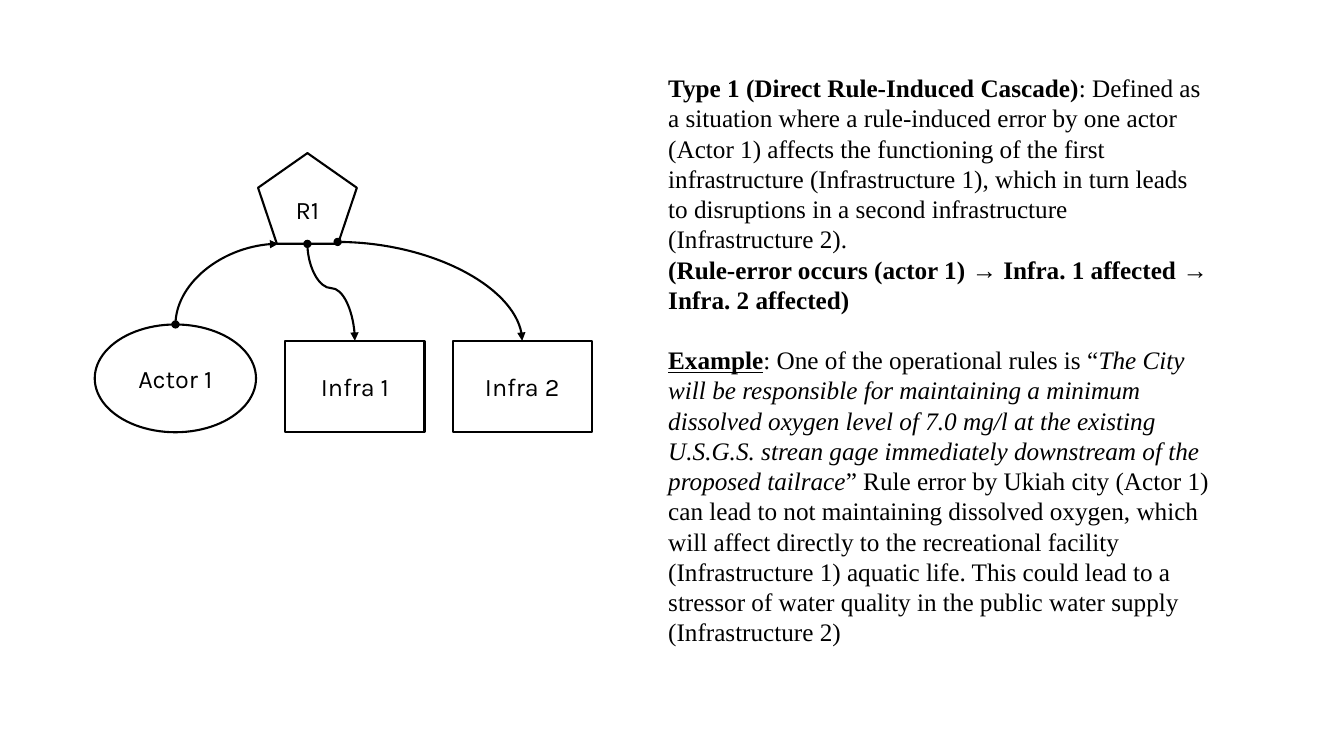
import lxml.etree
import pptx
import pptx.dml.color
import pptx.enum.shapes
import pptx.enum.text
import pptx.oxml.ns
import pptx.util

Pt = pptx.util.Pt
SHAPES = pptx.enum.shapes.MSO_SHAPE
BLACK = "000000"
WHITE = "FFFFFF"

DEFINITION = [
    ("Type 1 (Direct Rule-Induced Cascade)", "b"),
    (": Defined as a situation where a rule-induced error by one actor (Actor 1) affects the "
     "functioning of the first infrastructure (Infrastructure 1), which in turn leads to "
     "disruptions in a second infrastructure (Infrastructure 2).", ""),
    ("\n", ""),
    ("(Rule-error occurs (actor 1) ", "b"),
    ("→", ""),
    (" Infra. 1 affected ", "b"),
    ("→", ""),
    (" Infra. 2 affected)", "b"),
]
EXAMPLE = [
    ("Example", "bu"),
    (": One of the operational rules is “", ""),
    ("The City will be responsible for maintaining a minimum dissolved oxygen level of 7.0 mg/l "
     "at the existing U.S.G.S. strean gage immediately downstream of the proposed tailrace", "i"),
    ("” Rule error by Ukiah city (Actor 1) can lead to not maintaining dissolved oxygen, which "
     "will affect directly to the recreational facility (Infrastructure 1) aquatic life. This "
     "could lead to a stressor of water quality in the public water supply "
     "(Infrastructure 2)", ""),
]


def set_color(color_format, value):
    color_format.rgb = pptx.dml.color.RGBColor.from_string(value)


def set_line(line):
    line.width = Pt(1.5)
    line.fill.solid()
    set_color(line.fill.fore_color, BLACK)


def format_font(paragraph, name):
    paragraph.font.name = name
    paragraph.font.size = Pt(18)
    set_color(paragraph.font.color, BLACK)


def add_node(slide, kind, label, left, top, width, height):
    shape = slide.shapes.add_shape(kind, Pt(left), Pt(top), Pt(width), Pt(height))
    shape.shadow.inherit = False
    shape.fill.solid()
    set_color(shape.fill.fore_color, WHITE)
    set_line(shape.line)
    frame = shape.text_frame
    frame.vertical_anchor = pptx.enum.text.MSO_ANCHOR.MIDDLE
    paragraph = frame.paragraphs[0]
    paragraph.text = label
    paragraph.alignment = pptx.enum.text.PP_ALIGN.CENTER
    format_font(paragraph, "Karla")


def add_element(parent, tag, **attributes):
    lxml.etree.SubElement(parent, pptx.oxml.ns.qn(tag), attributes)


def add_curve(slide, start, end, preset, rotation=0, bend=None):
    (x1, y1), (x2, y2) = start, end
    if rotation:
        center_x, center_y = (x1 + x2) / 2, (y1 + y2) / 2
        turn = 1 if rotation == 90 else -1
        half_x, half_y = turn * (y2 - y1) / 2, -turn * (x2 - x1) / 2
        x1, y1 = center_x - half_x, center_y - half_y
        x2, y2 = center_x + half_x, center_y + half_y
    connector = slide.shapes.add_connector(
        pptx.enum.shapes.MSO_CONNECTOR.CURVE, Pt(x1), Pt(y1), Pt(x2), Pt(y2))
    set_line(connector.line)
    qualified = pptx.oxml.ns.qn
    properties = connector._element.spPr
    if rotation:
        properties.find(qualified("a:xfrm")).set("rot", str(rotation * 60000))
    geometry = properties.find(qualified("a:prstGeom"))
    geometry.set("prst", preset)
    if bend:
        add_element(geometry.find(qualified("a:avLst")), "a:gd", name="adj1", fmla=f"val {bend}")
    line = properties.find(qualified("a:ln"))
    add_element(line, "a:headEnd", type="oval")
    add_element(line, "a:tailEnd", type="triangle")
    add_element(properties, "a:effectLst")


def add_cascade_diagram(slide, left, top):
    infra_top = top + 134
    add_node(slide, SHAPES.REGULAR_PENTAGON, "R1", left + 116.6, top, 70.6, 64.8)
    add_node(slide, SHAPES.OVAL, "Actor 1", left, top + 122.4, 115.2, 77)
    for index in range(2):
        add_node(slide, SHAPES.RECTANGLE, f"Infra {index + 1}",
                 left + 136.1 + 119.5 * index, infra_top, 99.4, 65.5)
    rule_bottom = top + 64.8
    add_curve(slide, (left + 57.6, top + 122.4), (left + 131, rule_bottom),
              "curvedConnector2", 90)
    add_curve(slide, (left + 173.5, top + 63.4), (left + 305.3, infra_top), "curvedConnector2")
    add_curve(slide, (left + 151.9, rule_bottom), (left + 185.8, infra_top),
              "curvedConnector3", 270, 45700)


def add_explanation(slide, left, top, width, height):
    box = slide.shapes.add_textbox(Pt(left), Pt(top), Pt(width), Pt(height))
    frame = box.text_frame
    frame.word_wrap = True
    for index, runs in enumerate((DEFINITION, EXAMPLE)):
        paragraph = frame.add_paragraph() if index else frame.paragraphs[0]
        paragraph.line_spacing = Pt(21.6)
        if index:
            paragraph.space_before = Pt(21.6)
        format_font(paragraph, "Times New Roman")
        for text, style in runs:
            if text == "\n":
                paragraph.add_line_break()
                continue
            run = paragraph.add_run()
            run.text = text
            run.font.bold = "b" in style
            run.font.italic = "i" in style
            run.font.underline = "u" in style


def main():
    presentation = pptx.Presentation()
    presentation.slide_width = Pt(960)
    presentation.slide_height = Pt(540)
    slide = presentation.slides.add_slide(presentation.slide_layouts[6])
    add_cascade_diagram(slide, 67.7, 109.4)
    add_explanation(slide, 470.2, 48.2, 402.5, 443.5)
    presentation.save("out.pptx")


if __name__ == "__main__":
    main()
